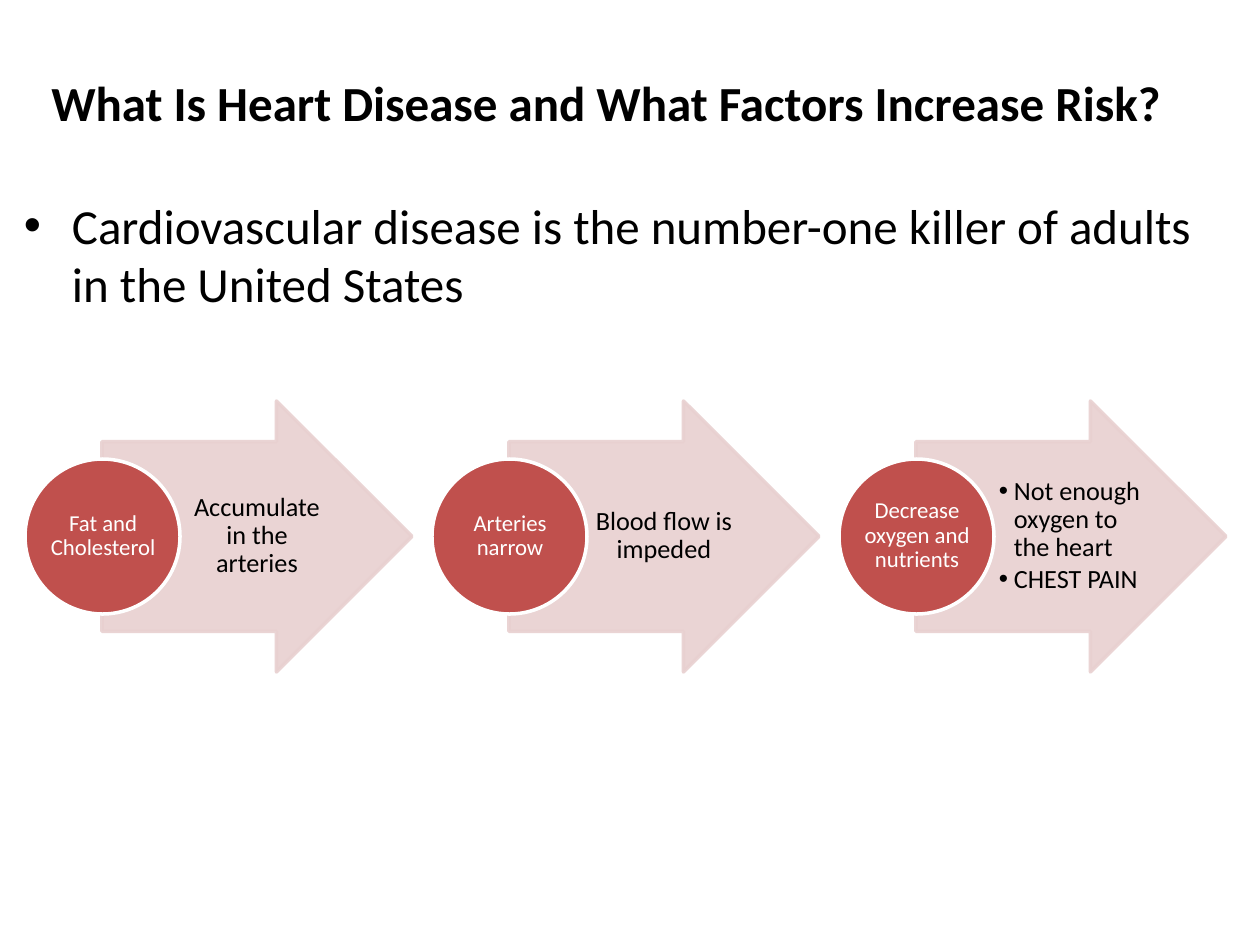
import pptx
import pptx.dml.color
import pptx.enum.shapes
import pptx.enum.text
import pptx.oxml.ns
import pptx.util
from lxml import etree

RGB = pptx.dml.color.RGBColor
BLACK = RGB(0x00, 0x00, 0x00)
WHITE = RGB(0xFF, 0xFF, 0xFF)
RED = RGB(0xC0, 0x50, 0x4D)
PINK = RGB(0xE8, 0xD0, 0xD0)

SHAPES = pptx.enum.shapes.MSO_SHAPE
ANCHOR = pptx.enum.text.MSO_ANCHOR
ALIGN = pptx.enum.text.PP_ALIGN
EMU_PER_PX = 914400 // 126

STAGE_PITCH = 407
# Circle text, arrow paragraphs, whether the arrow text is bulleted
STAGES = [
    ("Fat and Cholesterol", ["Accumulate in the arteries"], False),
    ("Arteries narrow", ["Blood flow is impeded"], False),
    ("Decrease oxygen and nutrients",
     ["Not enough oxygen to the heart", "CHEST PAIN"], True),
]


def px(length):
    return pptx.util.Emu(length * EMU_PER_PX)


def add_child(parent, tag, **attributes):
    return etree.SubElement(parent, pptx.oxml.ns.qn(tag), attributes)


class SlideBuilder:
    font_name = "Calibri"
    line_width = pptx.util.Pt(2)

    def __init__(self, page):
        self.page = page

    def shape(self, kind, box, fill, line, opacity=100):
        shape = self.page.shapes.add_shape(kind, *map(px, box))
        shape.shadow.inherit = False
        shape.fill.solid()
        shape.fill.fore_color.rgb = fill
        shape.line.color.rgb = line
        shape.line.width = self.line_width
        if opacity < 100:
            for color in shape.element.spPr.iter(pptx.oxml.ns.qn("a:srgbClr")):
                add_child(color, "a:alpha", val=str(opacity * 1000))
        return shape

    def text(self, box, lines, size, color=BLACK, bold=False, align=ALIGN.CENTER,
             anchor=ANCHOR.MIDDLE, insets=(13, 6, 13, 6), hang=0,
             spacing=1.0, before=0, after=0):
        """Add a text box; a hang above zero gives bullets with that indent in px."""
        frame = self.page.shapes.add_textbox(*map(px, box)).text_frame
        frame.word_wrap = True
        frame.vertical_anchor = anchor
        (frame.margin_left, frame.margin_top,
         frame.margin_right, frame.margin_bottom) = map(px, insets)
        frame.text = "\n".join(lines)
        for para in frame.paragraphs:
            para.alignment = align
            para.line_spacing = spacing
            para.space_before = pptx.util.Pt(before)
            para.space_after = pptx.util.Pt(after)
            para.font.name = self.font_name
            para.font.size = pptx.util.Pt(size)
            para.font.bold = bold
            para.font.color.rgb = color
            if hang:
                self.bullet(para, hang)

    def bullet(self, para, hang):
        properties = para._p.get_or_add_pPr()
        properties.set("marL", str(px(hang)))
        properties.set("indent", str(-px(hang)))
        font = etree.Element(pptx.oxml.ns.qn("a:buFont"), typeface="Arial")
        mark = etree.Element(pptx.oxml.ns.qn("a:buChar"), char="•")
        default_run = properties.find(pptx.oxml.ns.qn("a:defRPr"))
        default_run.addprevious(font)
        default_run.addprevious(mark)

    def stage(self, left, label, lines, bulleted):
        """Add an arrow with its text and the labelled circle at its tail."""
        arrow = self.shape(SHAPES.RIGHT_ARROW, (left + 77, 401, 310, 271),
                           PINK, PINK, opacity=90)
        arrow.adjustments[0] = 0.7
        arrow.adjustments[1] = 0.5
        self.text((left + 155, 441, 151, 190), lines, 15, insets=(5, 1, 2, 1),
                  align=ALIGN.LEFT if bulleted else ALIGN.CENTER,
                  hang=15 if bulleted else 0,
                  spacing=0.9, after=2 if bulleted else 5)
        self.shape(SHAPES.OVAL, (left, 459, 155, 155), RED, WHITE)
        self.text((left + 23, 481, 110, 110), [label], 13, WHITE,
                  insets=(1, 1, 1, 1), spacing=0.9, after=5)


def main():
    deck = pptx.Presentation()
    deck.slide_width = px(1260)
    deck.slide_height = px(945)
    builder = SlideBuilder(deck.slides.add_slide(deck.slide_layouts[6]))

    for index, (label, lines, bulleted) in enumerate(STAGES):
        builder.stage(25 + index * STAGE_PITCH, label, lines, bulleted)
    builder.text((7, 37, 1198, 130),
                 ["What Is Heart Disease and What Factors Increase Risk?"],
                 28, bold=True)
    builder.text((11, 189, 1225, 674),
                 ["Cardiovascular disease is the number-one killer of adults "
                  "in the United States"],
                 28, align=ALIGN.LEFT, anchor=ANCHOR.TOP, hang=48, before=6)
    deck.save("out.pptx")


if __name__ == "__main__":
    main()
